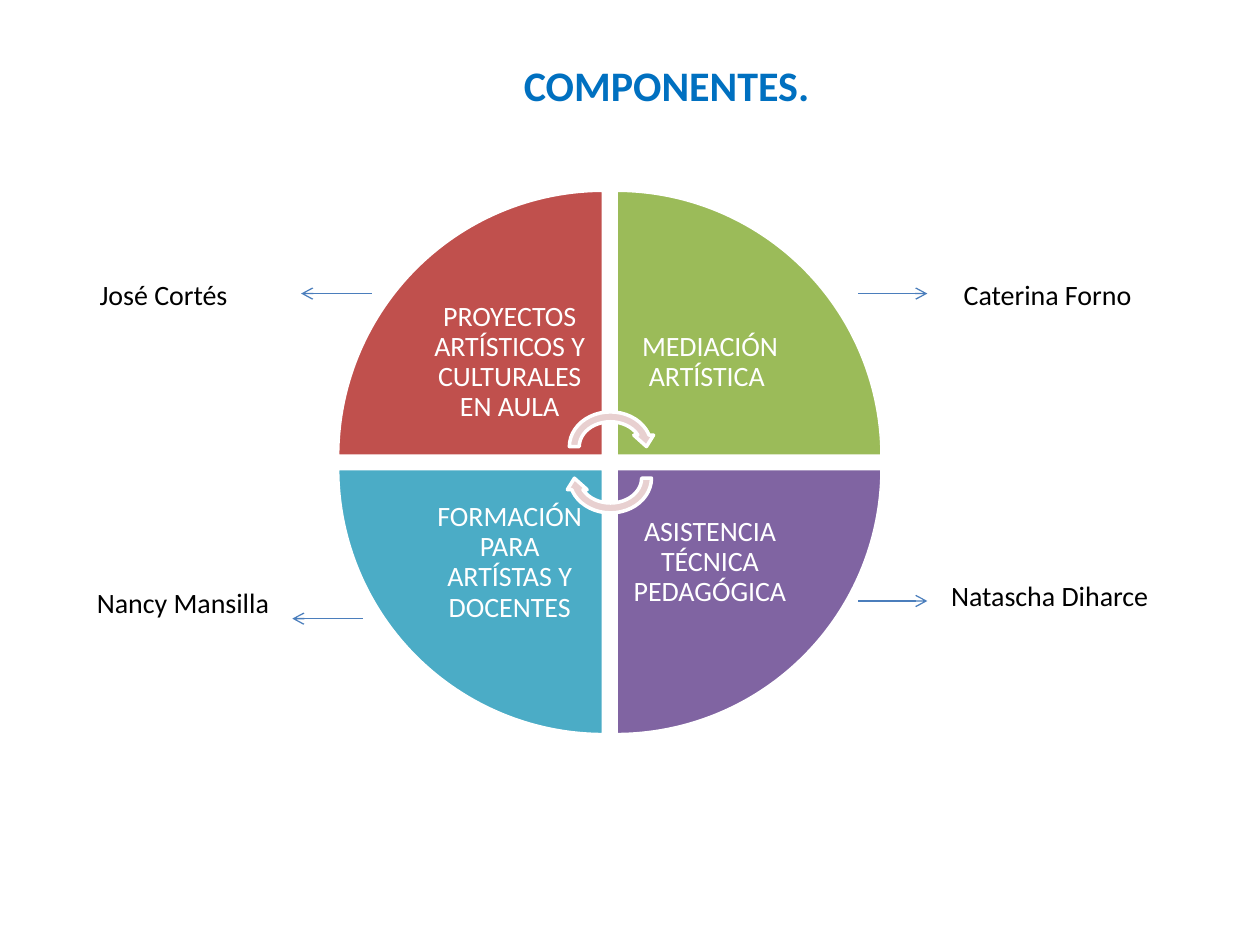
from dataclasses import dataclass

from lxml import etree
from pptx import Presentation
from pptx.dml.color import RGBColor
from pptx.enum.shapes import MSO_CONNECTOR, MSO_SHAPE
from pptx.enum.text import MSO_ANCHOR, MSO_AUTO_SIZE, PP_ALIGN
from pptx.oxml.ns import qn
from pptx.util import Inches, Pt

WEDGE, CURVE = MSO_SHAPE.PIE_WEDGE, MSO_SHAPE.CIRCULAR_ARROW
STRAIGHT = MSO_CONNECTOR.STRAIGHT
CENTER, JUSTIFY = PP_ALIGN.CENTER, PP_ALIGN.JUSTIFY
TOP, MIDDLE = MSO_ANCHOR.TOP, MSO_ANCHOR.MIDDLE
GROW, FIXED = MSO_AUTO_SIZE.SHAPE_TO_FIT_TEXT, MSO_AUTO_SIZE.NONE


@dataclass(frozen=True)
class Theme:
    font: str = "Calibri"
    title: str = "0070C0"
    white: str = "FFFFFF"
    black: str = "000000"
    arrow: str = "4B7EBC"
    curve: str = "E8D0D0"
    red: str = "C0504D"
    green: str = "9BBB59"
    purple: str = "8064A2"
    teal: str = "4BACC6"
    big: int = 24
    body: int = 16


THEME = Theme()

# Wheel geometry: quarter size, gap between quarters, label size
LEFT, UPPER, SIZE, GAP, LABEL = 2.68, 1.51, 2.11, 0.1, 1.49

# Column, row, turn, colour, text; clockwise from the upper left
PARTS = [
    (0, 0, 0, THEME.red, "PROYECTOS ARTÍSTICOS Y CULTURALES EN AULA"),
    (1, 0, 90, THEME.green, "MEDIACIÓN ARTÍSTICA "),
    (1, 1, 180, THEME.purple, "ASISTENCIA TÉCNICA PEDAGÓGICA"),
    (0, 1, 270, THEME.teal, "FORMACIÓN PARA ARTÍSTAS Y DOCENTES"),
]

# Name, box, left inset
PEOPLE = [
    ("José Cortés", (0.2, 2.15, 2.05, 0.37), 0.59),
    ("Caterina Forno", (7.55, 2.15, 2.04, 0.37), 0.1),
    ("Natascha Diharce", (7.45, 4.54, 2.23, 0.37), 0.1),
    ("Nancy Mansilla", (0.67, 4.6, 1.58, 0.37), 0.1),
]

# Start, end, height of each arrow
ARROWS = [(2.95, 2.39, 2.33), (6.81, 7.36, 2.33),
          (6.81, 7.36, 4.77), (2.88, 2.32, 4.91)]


def apply(item, values):
    for name, value in values.items():
        setattr(item, name, value)


def add_text(slide, text, box, align, color, size=THEME.body, bold=False,
             space=1.0, **frame):
    shape = slide.shapes.add_textbox(*map(Inches, box))
    body = shape.text_frame
    apply(body, {"word_wrap": True, "auto_size": GROW,
                 "vertical_anchor": TOP, **frame})
    para = body.paragraphs[0]
    para.text = text
    apply(para, {"alignment": align, "line_spacing": space})
    font = para.runs[0].font
    apply(font, {"name": THEME.font, "size": Pt(size), "bold": bold})
    font.color.rgb = RGBColor.from_string(color)


def add_piece(slide, kind, box, color, turn):
    shape = slide.shapes.add_shape(kind, *map(Inches, box))
    shape.rotation = turn
    shape.shadow.inherit = False
    shape.fill.solid()
    shape.fill.fore_color.rgb = RGBColor.from_string(color)
    shape.line.color.rgb = RGBColor.from_string(THEME.white)
    shape.line.width = Pt(2)


def add_arrow(slide, start, end, y):
    line = slide.shapes.add_connector(
        STRAIGHT, Inches(start), Inches(y), Inches(end), Inches(y))
    line.line.color.rgb = RGBColor.from_string(THEME.arrow)
    line.line.width = Pt(0.75)
    props = line._element.spPr
    etree.SubElement(props.find(qn("a:ln")), qn("a:tailEnd"), type="arrow")
    etree.SubElement(props, qn("a:effectLst"))


def add_part(slide, col, row, turn, color, text):
    x, y = LEFT + col * (SIZE + GAP), UPPER + row * (SIZE + GAP)
    add_piece(slide, WEDGE, (x, y, SIZE, SIZE), color, turn)
    # The label hugs the corner nearest the hub
    shift = SIZE - LABEL
    box = (x + (1 - col) * shift, y + (1 - row) * shift, LABEL, LABEL)
    sides = ("left", "top", "right", "bottom")
    inset = {f"margin_{side}": Inches(0.12) for side in sides}
    add_text(slide, text, box, CENTER, THEME.white, space=0.9,
             auto_size=FIXED, vertical_anchor=MIDDLE, **inset)


def main():
    deck = Presentation()
    deck.slide_width, deck.slide_height = Inches(10), Inches(7.5)
    slide = deck.slides.add_slide(deck.slide_layouts[6])

    # Title
    add_text(slide, "COMPONENTES.", (0.8, 0.42, 8.98, 0.5), CENTER,
             THEME.title, THEME.big, True)

    # Wheel
    for part in PARTS:
        add_part(slide, *part)

    # Turning arrows at the hub
    for y, turn in ((3.23, 0), (3.48, 180)):
        add_piece(slide, CURVE, (4.48, y, 0.73, 0.63), THEME.curve, turn)

    # People in charge
    for name, box, inset in PEOPLE:
        add_text(slide, name, box, JUSTIFY, THEME.black,
                 margin_left=Inches(inset))
    for arrow in ARROWS:
        add_arrow(slide, *arrow)

    deck.save("out.pptx")


if __name__ == "__main__":
    main()
